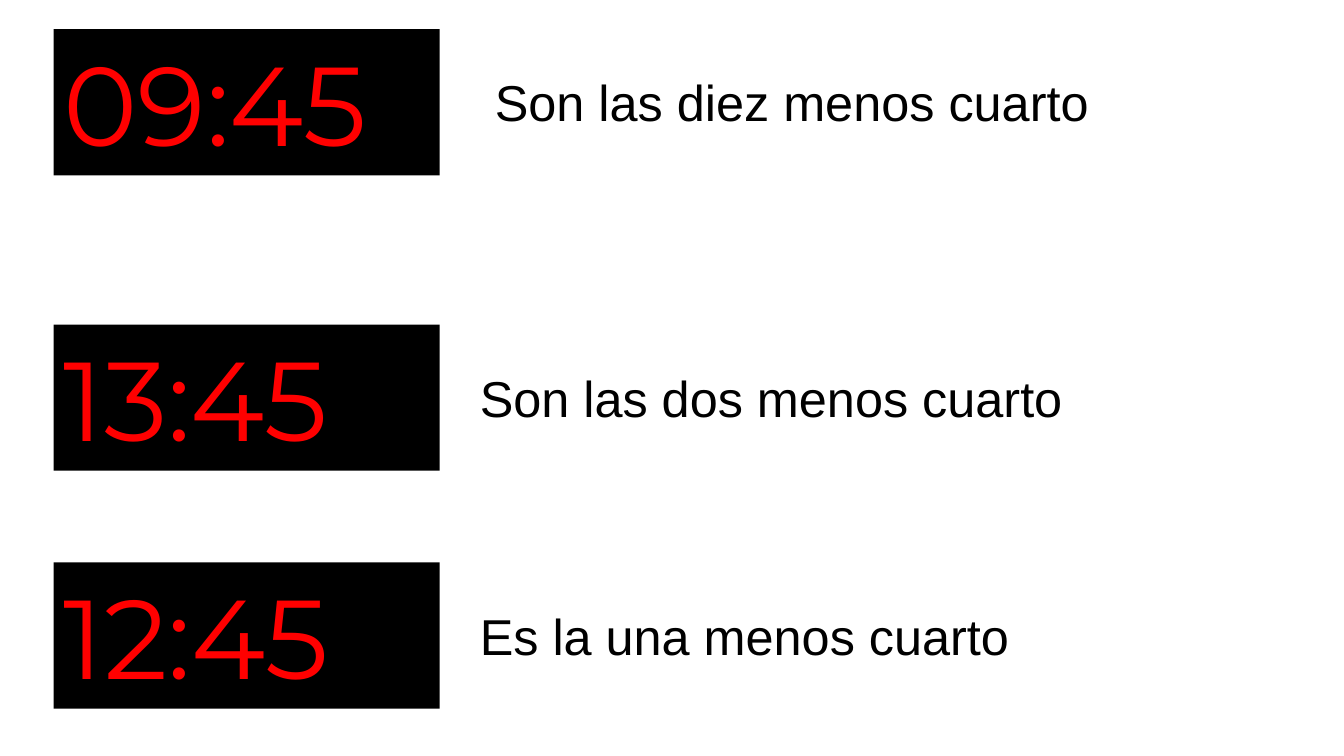
from pptx import Presentation
from pptx.dml.color import RGBColor
from pptx.enum.text import MSO_AUTO_SIZE as AutoSize
from pptx.util import Inches, Pt


def colour(value):
    """Turn a hex string into a colour."""
    return RGBColor.from_string(value)


class ClockPage:
    """Hold the style and the page, placing elements on a 25 by 30 grid."""

    clock_font, clock_size, clock_colour = "Montserrat", 80, "FF0000"
    label_font, label_size, label_colour = "Arial", 36, "000000"
    display_fill = "000000"
    clock_left, clock_width, clock_height = 1, 7.18, 5.8
    label_height = 2.84

    def __init__(self, deck):
        """Add a blank page to the deck and measure its grid."""
        self.page = deck.slides.add_slide(deck.slide_layouts[6])
        self.column = deck.slide_width / 25
        self.row = deck.slide_height / 30

    def text(self, words, left, top, width, height, font, size, ink):
        """Add one line of text at a grid position."""
        box = self.page.shapes.add_textbox(
            round(left * self.column), round(top * self.row),
            round(width * self.column), round(height * self.row))
        frame = box.text_frame
        frame.word_wrap = True
        frame.auto_size = AutoSize.SHAPE_TO_FIT_TEXT
        para = frame.paragraphs[0]
        para.text = words
        para.font.name = font
        para.font.size = Pt(size)
        para.font.color.rgb = colour(ink)
        return box

    def clock(self, time, top):
        """Add a digital display showing a time."""
        display = self.text(time, self.clock_left, top, self.clock_width,
                            self.clock_height, self.clock_font,
                            self.clock_size, self.clock_colour)
        display.fill.solid()
        display.fill.fore_color.rgb = colour(self.display_fill)

    def label(self, words, left, clock_top, width):
        """Add a phrase centred vertically beside its clock."""
        top = clock_top + (self.clock_height - self.label_height) / 2
        self.text(words, left, top, width, self.label_height,
                  self.label_font, self.label_size, self.label_colour)


def main():
    """Build the page of clocks and save the deck."""
    deck = Presentation()
    deck.slide_width, deck.slide_height = Inches(13.33), Inches(7.5)
    page = ClockPage(deck)
    times = [
        ("09:45", "Son las diez menos cuarto", 1.16, 9.02, 14.04),
        ("13:45", "Son las dos menos cuarto", 12.88, 8.74, 13.31),
        ("12:45", "Es la una menos cuarto", 22.32, 8.74, 10.43),
    ]
    for time, phrase, top, label_left, label_width in times:
        page.clock(time, top)
        page.label(phrase, label_left, top, label_width)
    deck.save("out.pptx")


if __name__ == "__main__":
    main()
